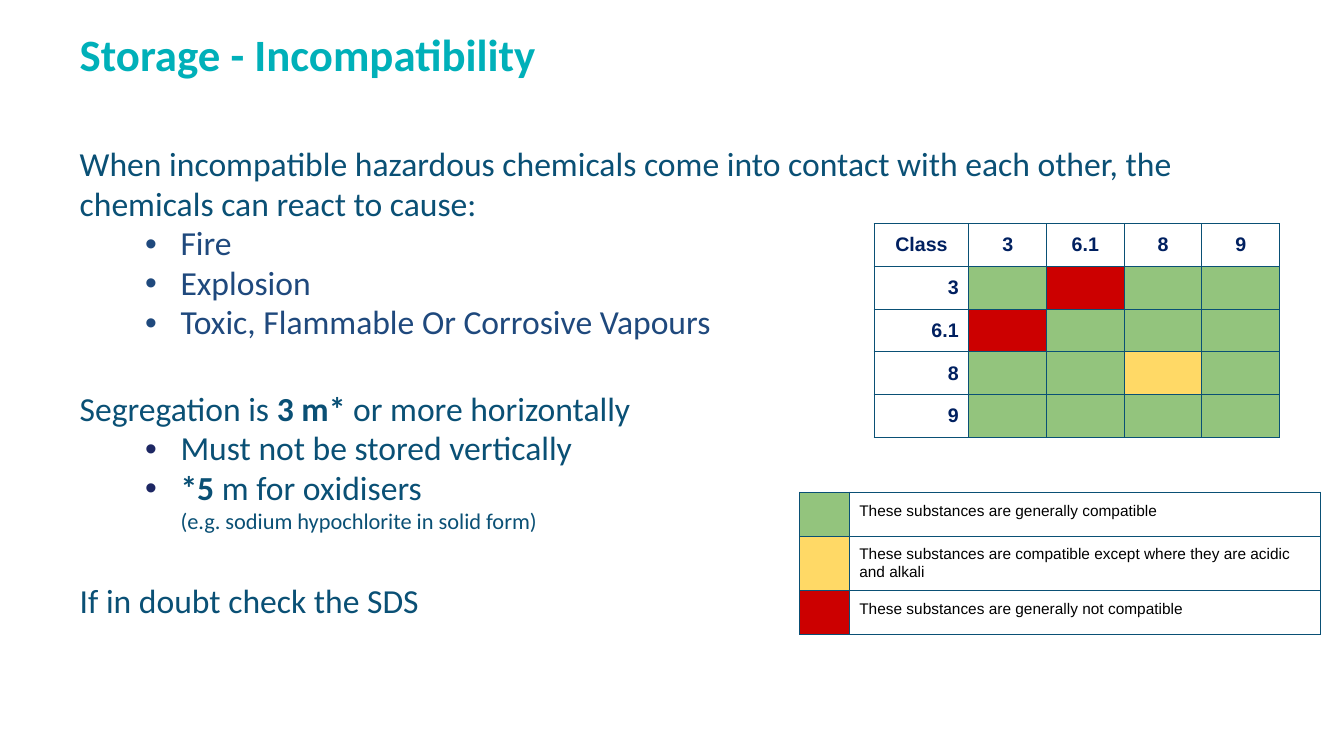
import lxml.etree
import pptx
import pptx.dml.color
import pptx.enum.text
import pptx.oxml.ns
import pptx.util

RGBColor = pptx.dml.color.RGBColor
Align = pptx.enum.text.PP_ALIGN
Anchor = pptx.enum.text.MSO_ANCHOR
Pt = pptx.util.Pt
qn = pptx.oxml.ns.qn

TEAL = RGBColor(0x00, 0xB0, 0xB9)
PETROL = RGBColor(0x0A, 0x50, 0x75)
BLUE = RGBColor(0x1F, 0x49, 0x7D)
INDIGO = RGBColor(0x1D, 0x27, 0x63)
NAVY = RGBColor(0x00, 0x20, 0x60)
BLACK = RGBColor(0x00, 0x00, 0x00)
GREEN = RGBColor(0x93, 0xC4, 0x7D)
YELLOW = RGBColor(0xFF, 0xD9, 0x66)
RED = RGBColor(0xCC, 0x00, 0x00)

WIDTH = pptx.util.Inches(13.33)
HEIGHT = pptx.util.Inches(7.5)
CELL_MARGIN = pptx.util.Inches(0.1)
SECTION_GAP = 33.5  # one empty line plus a fifth of a line, in points

TITLE_FONT = {"name": "Calibri", "size": Pt(32), "bold": True}
BODY_FONT = {"name": "Calibri", "size": Pt(24), "bold": False}
CLASS_FONT = {"name": "Arial", "size": Pt(14), "bold": True}
LEGEND_FONT = {"name": "Arial", "size": Pt(11), "bold": False}

# Hazard classes and how each pair may be stored
CLASSES = ["3", "6.1", "8", "9"]
PAIR_COLORS = {("3", "6.1"): RED, ("6.1", "3"): RED, ("8", "8"): YELLOW}
LEGEND = [
    (GREEN, "These substances are generally compatible"),
    (YELLOW, "These substances are compatible except where they are acidic and alkali"),
    (RED, "These substances are generally not compatible"),
]


def across(percent):
    return round(WIDTH * percent / 100)


def down(percent):
    return round(HEIGHT * percent / 100)


def set_attributes(target, values):
    for name, value in values.items():
        setattr(target, name, value)


def add_run(paragraph, text, font, color, **changes):
    run = paragraph.add_run()
    run.text = text
    set_attributes(run.font, {**font, **changes})
    run.font.color.rgb = color


def prepare_placeholder(shape, left, top, width, height):
    set_attributes(shape, {"left": across(left), "top": down(top),
                           "width": across(width), "height": down(height)})
    set_attributes(shape.text_frame, {
        "word_wrap": True, "vertical_anchor": Anchor.TOP,
        "auto_size": pptx.enum.text.MSO_AUTO_SIZE.NONE})
    return shape.text_frame


def add_body_paragraph(frame, parts, color=PETROL, bullet_color=None, gap=0):
    """Add one paragraph made of (text, bold) parts, with a bullet if it has a colour."""
    first = frame.paragraphs[0]
    paragraph = frame.add_paragraph() if first.runs else first
    set_attributes(paragraph, {"alignment": Align.LEFT, "line_spacing": 0.98,
                               "space_before": Pt(gap), "space_after": Pt(0)})
    properties = paragraph._p.get_or_add_pPr()
    if bullet_color is None:
        properties.set("marL", "0")
        properties.set("indent", "0")
        lxml.etree.SubElement(properties, qn("a:buNone"))
    else:
        paragraph.level = 1
        properties.set("marL", str(pptx.util.Inches(1)))
        properties.set("indent", str(pptx.util.Inches(-0.35)))
        tint = lxml.etree.SubElement(properties, qn("a:buClr"))
        lxml.etree.SubElement(tint, qn("a:srgbClr"), val=str(bullet_color))
        lxml.etree.SubElement(properties, qn("a:buFont"), typeface="Arial")
        lxml.etree.SubElement(properties, qn("a:buChar"), char="•")
    for text, bold in parts:
        add_run(paragraph, text, BODY_FONT, color, bold=bold)
    return paragraph


def add_grid(slide, left, top, column_widths, row_heights):
    """Add an unfilled table with thin borders; sizes are shares of the slide."""
    table = slide.shapes.add_table(
        len(row_heights), len(column_widths), across(left), down(top),
        across(sum(column_widths)), down(sum(row_heights))).table
    set_attributes(table, {"first_row": False, "horz_banding": False})
    for column, width in zip(table.columns, column_widths):
        column.width = across(width)
    for row, height in zip(table.rows, row_heights):
        row.height = down(height)
    for cell in table.iter_cells():
        properties = cell._tc.get_or_add_tcPr()
        for side in ("a:lnL", "a:lnR", "a:lnT", "a:lnB"):
            line = lxml.etree.SubElement(properties, qn(side), w=str(Pt(0.75)))
            fill = lxml.etree.SubElement(line, qn("a:solidFill"))
            lxml.etree.SubElement(fill, qn("a:srgbClr"), val=str(PETROL))
        cell.fill.background()
    return table


def fill_cell(cell, color):
    cell.fill.solid()
    cell.fill.fore_color.rgb = color


def write_cell(cell, text, font, color, alignment, anchor):
    sides = ("margin_left", "margin_right", "margin_top", "margin_bottom")
    set_attributes(cell, {**dict.fromkeys(sides, CELL_MARGIN), "vertical_anchor": anchor})
    paragraph = cell.text_frame.paragraphs[0]
    paragraph.alignment = alignment
    add_run(paragraph, text, font, color)


def add_title(slide):
    frame = prepare_placeholder(slide.shapes.title, 5.18, 4, 89.65, 12.4)
    paragraph = frame.paragraphs[0]
    set_attributes(paragraph, {"alignment": Align.LEFT, "line_spacing": Pt(32)})
    add_run(paragraph, "Storage - Incompatibility", TITLE_FONT, TEAL)


def add_body(slide):
    frame = prepare_placeholder(slide.placeholders[1], 5.18, 18.53, 89.65, 68.53)
    add_body_paragraph(frame, [("When incompatible hazardous chemicals come into contact "
                                "with each other, the chemicals can react to cause:", False)])
    for effect in ("Fire", "Explosion", "Toxic, Flammable Or Corrosive Vapours"):
        add_body_paragraph(frame, [(effect, False)], BLUE, BLUE)

    add_body_paragraph(frame, [("Segregation is ", False), ("3 m*", True),
                               (" or more horizontally", False)], gap=SECTION_GAP)
    add_body_paragraph(frame, [("Must not be stored vertically", False)], bullet_color=INDIGO)
    oxidisers = add_body_paragraph(frame, [("*5 ", True), ("m for oxidisers", False)],
                                   bullet_color=INDIGO)
    oxidisers.add_line_break()
    add_run(oxidisers, "(e.g. sodium hypochlorite in solid form)", BODY_FONT, PETROL, size=Pt(16))

    add_body_paragraph(frame, [("If in doubt check the SDS", False)], gap=SECTION_GAP)


def add_class_table(slide):
    count = len(CLASSES)
    table = add_grid(slide, 65.04, 29.6, [7.05] + [5.78] * count, [5.65] * (count + 1))
    for column, heading in enumerate(["Class"] + CLASSES):
        write_cell(table.cell(0, column), heading, CLASS_FONT, NAVY, Align.CENTER, Anchor.MIDDLE)
    for row, row_class in enumerate(CLASSES, 1):
        write_cell(table.cell(row, 0), row_class, CLASS_FONT, NAVY, Align.RIGHT, Anchor.MIDDLE)
        for column, column_class in enumerate(CLASSES, 1):
            fill_cell(table.cell(row, column),
                      PAIR_COLORS.get((row_class, column_class), GREEN))


def add_legend(slide):
    table = add_grid(slide, 59.49, 65.1, [3.7, 35.03], [5.8] * len(LEGEND))
    for row, (color, meaning) in enumerate(LEGEND):
        fill_cell(table.cell(row, 0), color)
        write_cell(table.cell(row, 1), meaning, LEGEND_FONT, BLACK, Align.LEFT, Anchor.TOP)


def main():
    presentation = pptx.Presentation()
    set_attributes(presentation, {"slide_width": WIDTH, "slide_height": HEIGHT})
    slide = presentation.slides.add_slide(presentation.slide_layouts[1])
    add_title(slide)
    add_body(slide)
    add_class_table(slide)
    add_legend(slide)
    presentation.save("out.pptx")


if __name__ == "__main__":
    main()
